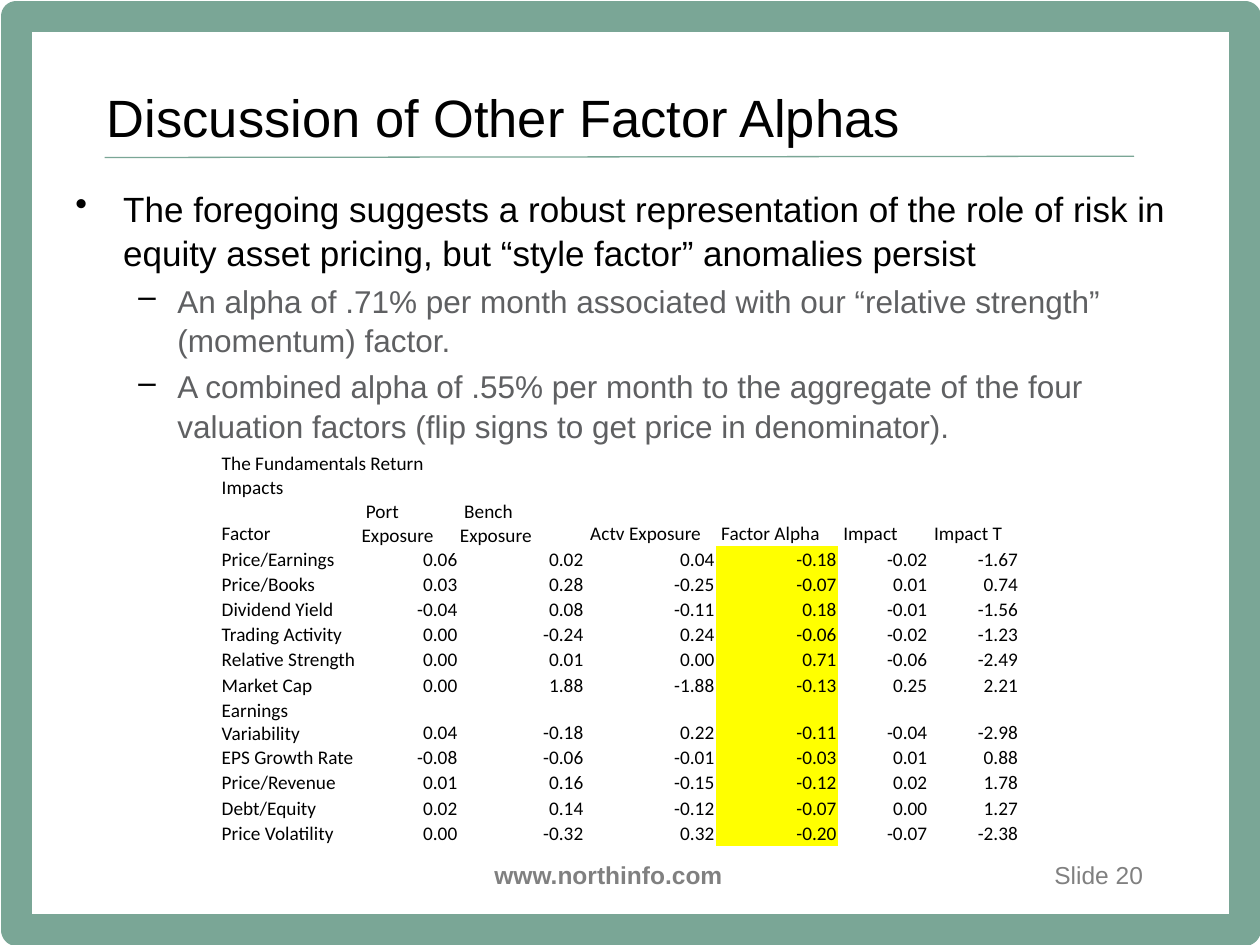
from lxml import etree
from pptx import Presentation
from pptx.dml.color import RGBColor
from pptx.enum import shapes, text
from pptx.oxml import ns
from pptx.util import Inches, Pt

GREEN = RGBColor(0x7A, 0xA6, 0x96)
BLACK = RGBColor(0, 0, 0)
FOOTER_GRAY = RGBColor(0x80, 0x80, 0x80)
BODY_GRAY = RGBColor(0x5F, 0x60, 0x62)
YELLOW = RGBColor(0xFF, 0xFF, 0)
NO_GRID_STYLE = "{2D5ABB26-0587-4C30-8999-92F81FD0307C}"
ALPHA_COLUMN = 4

POINTS = [
    (0, "The foregoing suggests a robust representation of the role of risk in "
        "equity asset pricing, but “style factor” anomalies persist"),
    (1, "An alpha of .71% per month associated with our “relative strength” "
        "(momentum) factor."),
    (1, "A combined alpha of .55% per month to the aggregate of the four "
        "valuation factors (flip signs to get price in denominator)."),
]
# bullet, left margin, hanging indent, size, colour
LEVELS = [("•", 0.38, 0.38, 20, BLACK), ("–", 0.81, 0.31, 18, BODY_GRAY)]

TABLE_TITLE = "The Fundamentals Return Impacts"
COLUMN_WIDTHS = [1.11, 0.78, 1, 1.04, 0.97, 0.72, 0.72]
HEADER = ["Factor", " Port Exposure", " Bench Exposure", " Actv Exposure",
          " Factor Alpha", " Impact", " Impact T"]
FACTORS = [
    ("Price/Earnings", "0.06", "0.02", "0.04", "-0.18", "-0.02", "-1.67"),
    ("Price/Books", "0.03", "0.28", "-0.25", "-0.07", "0.01", "0.74"),
    ("Dividend Yield", "-0.04", "0.08", "-0.11", "0.18", "-0.01", "-1.56"),
    ("Trading Activity", "0.00", "-0.24", "0.24", "-0.06", "-0.02", "-1.23"),
    ("Relative Strength", "0.00", "0.01", "0.00", "0.71", "-0.06", "-2.49"),
    ("Market Cap", "0.00", "1.88", "-1.88", "-0.13", "0.25", "2.21"),
    ("Earnings Variability", "0.04", "-0.18", "0.22", "-0.11", "-0.04", "-2.98"),
    ("EPS Growth Rate", "-0.08", "-0.06", "-0.01", "-0.03", "0.01", "0.88"),
    ("Price/Revenue", "0.01", "0.16", "-0.15", "-0.12", "0.02", "1.78"),
    ("Debt/Equity", "0.02", "0.14", "-0.12", "-0.07", "0.00", "1.27"),
    ("Price Volatility", "0.00", "-0.32", "0.32", "-0.20", "-0.07", "-2.38"),
]


def write(paragraph, words, size=18, color=BLACK, font="Arial", bold=False,
          align=text.PP_ALIGN.LEFT):
    paragraph.text = words
    paragraph.alignment = align
    paragraph.font.size = Pt(size)
    paragraph.font.name = font
    paragraph.font.bold = bold
    paragraph.font.color.rgb = color


def add_frame(slide, left, top, width, height, anchor=text.MSO_ANCHOR.TOP):
    """Add a wrapping text box and return its text frame."""
    frame = slide.shapes.add_textbox(
        Inches(left), Inches(top), Inches(width), Inches(height)).text_frame
    frame.word_wrap = True
    frame.vertical_anchor = anchor
    return frame


def add_border(slide, left, top, width, height):
    border = slide.shapes.add_shape(
        shapes.MSO_SHAPE.RECTANGLE,
        Inches(left), Inches(top), Inches(width), Inches(height))
    border.shadow.inherit = False
    border.fill.background()
    border.line.color.rgb = GREEN
    border.line.width = Pt(18)


def add_footer(slide, left, top, width, height):
    address = add_frame(slide, left, top, 2.56, height)
    write(address.paragraphs[0], "www.northinfo.com", size=14,
          color=FOOTER_GRAY, bold=True, align=text.PP_ALIGN.CENTER)
    number_width = 1.25
    number = add_frame(slide, left + width - number_width, top, number_width, height)
    write(number.paragraphs[0], "Slide 20", size=14, color=FOOTER_GRAY,
          align=text.PP_ALIGN.RIGHT)


def add_title(slide, left, top, width, height):
    """Add the heading and the rule under it."""
    rule = slide.shapes.add_connector(
        shapes.MSO_CONNECTOR.STRAIGHT, Inches(left + 0.08), Inches(top + 0.67),
        Inches(left + 8.25), Inches(top + 0.66))
    rule.line.color.rgb = GREEN
    rule.line.width = Pt(0.75)
    etree.SubElement(rule._element.spPr, ns.qn("a:effectLst"))
    frame = add_frame(slide, left, top, width, height, text.MSO_ANCHOR.MIDDLE)
    write(frame.paragraphs[0], "Discussion of Other Factor Alphas", size=30)


def set_bullet(paragraph, character, margin, hanging):
    properties = paragraph._p.get_or_add_pPr()
    properties.set("marL", str(Inches(margin)))
    properties.set("indent", str(-Inches(hanging)))
    bullet_color = etree.SubElement(properties, ns.qn("a:buClr"))
    etree.SubElement(bullet_color, ns.qn("a:srgbClr")).set("val", str(BLACK))
    etree.SubElement(properties, ns.qn("a:buChar")).set("char", character)


def add_points(slide, left, top, width, height):
    frame = add_frame(slide, left, top, width, height)
    for index, (level, words) in enumerate(POINTS):
        paragraph = frame.add_paragraph() if index else frame.paragraphs[0]
        bullet, margin, hanging, size, color = LEVELS[level]
        paragraph.level = level
        set_bullet(paragraph, bullet, margin, hanging)
        write(paragraph, words, size=size, color=color)
        paragraph.line_spacing = 1.05
        if index:
            paragraph.space_before = Pt(size * 0.2)


def fill_cell(cell, words, align, highlighted):
    cell.margin_left = cell.margin_right = cell.margin_top = Inches(0.01)
    cell.margin_bottom = 0
    cell.vertical_anchor = text.MSO_ANCHOR.BOTTOM
    if highlighted:
        cell.fill.solid()
        cell.fill.fore_color.rgb = YELLOW
    else:
        cell.fill.background()
    write(cell.text_frame.paragraphs[0], words, size=11, font="Calibri", align=align)


def add_factor_table(slide, left, top, width, height):
    title_row = [TABLE_TITLE] + [""] * (len(HEADER) - 1)
    rows = [title_row, HEADER, *FACTORS]
    table = slide.shapes.add_table(
        len(rows), len(HEADER),
        Inches(left), Inches(top), Inches(width), Inches(height)).table
    table.first_row = table.horz_banding = False
    table._tbl.tblPr.find(ns.qn("a:tableStyleId")).text = NO_GRID_STYLE
    for column, column_width in zip(table.columns, COLUMN_WIDTHS):
        column.width = Inches(column_width)
    for r, row in enumerate(rows):
        table.rows[r].height = Inches(0.2)
        for c, words in enumerate(row):
            is_value = r > 1 and c > 0
            align = text.PP_ALIGN.RIGHT if is_value else text.PP_ALIGN.LEFT
            fill_cell(table.cell(r, c), words, align,
                      highlighted=is_value and c == ALPHA_COLUMN)
    table.cell(0, 0).merge(table.cell(0, 1))


def main():
    deck = Presentation()
    deck.slide_width, deck.slide_height = Inches(10), Inches(7.5)
    slide = deck.slides.add_slide(deck.slide_layouts[6])
    add_border(slide, 0.13, 0.13, 9.75, 7.25)
    add_footer(slide, 3.55, 6.78, 5.62, 0.33)
    add_title(slide, 0.75, 0.58, 9, 0.69)
    add_points(slide, 0.5, 1.42, 9, 4.95)
    add_factor_table(slide, 1.75, 3.58, 6.34, 2.6)
    deck.save("out.pptx")


if __name__ == "__main__":
    main()
